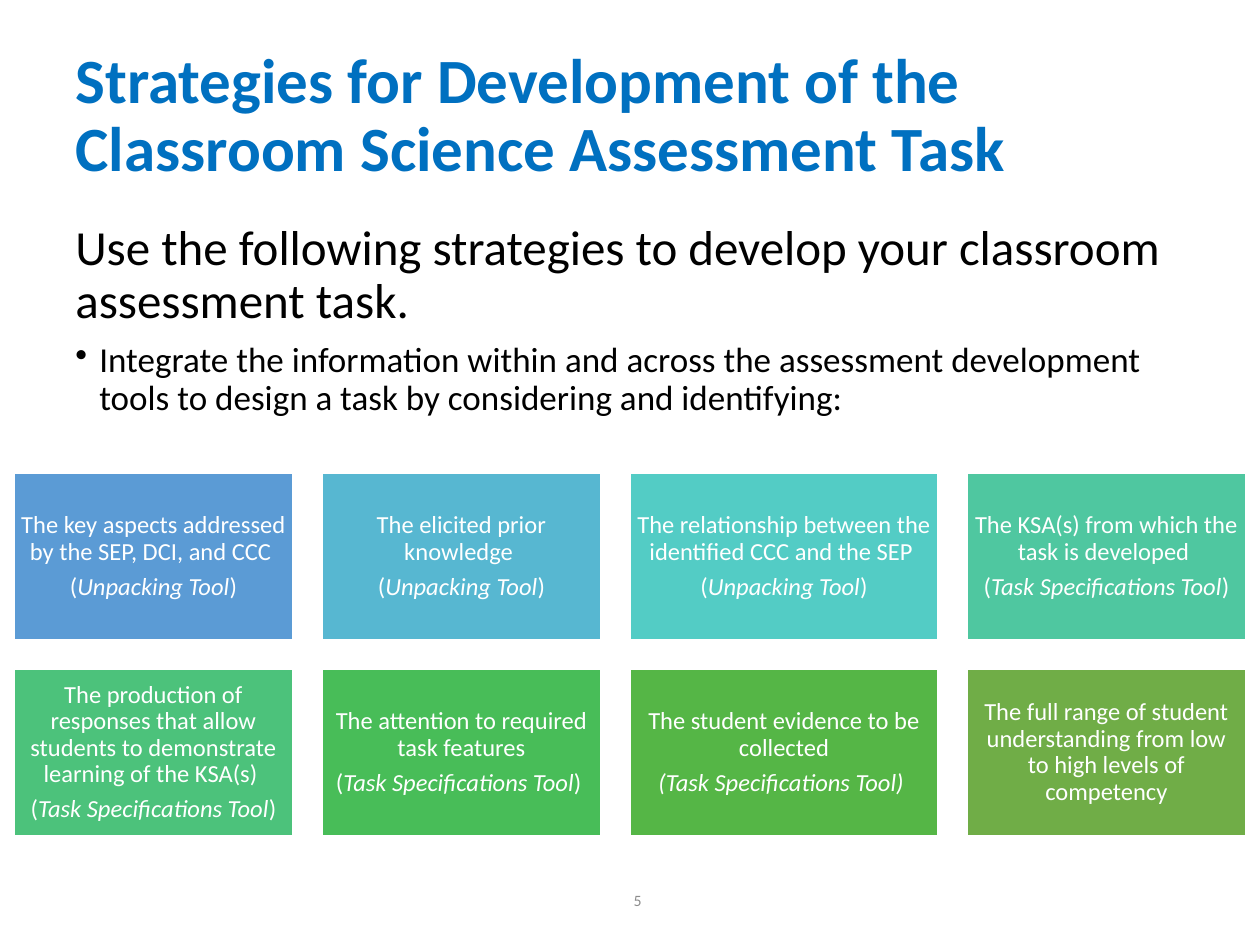
import pptx
import pptx.dml.color
import pptx.enum.shapes
import pptx.enum.text
import pptx.oxml
import pptx.oxml.ns
import pptx.util

PX = 914400 / 126
FONT = "Calibri"
ALIGN = pptx.enum.text.PP_ALIGN
ANCHOR = pptx.enum.text.MSO_ANCHOR
COLORS = {
    "title": "0070C0", "text": "000000", "number": "8C8C8C", "white": "FFFFFF",
    "blue": "5B9BD5", "sky": "57B7D1", "aqua": "53CCC5", "teal": "4FC7A0",
    "mint": "4CC27B", "green": "48BD58", "leaf": "55B646", "olive": "70AD47",
}
UNPACKING = [("(", False), ("Unpacking Tool", True), (")", False)]
SPECIFICATIONS = [("(", False), ("Task Specifications Tool", True), (")", False)]
STRATEGIES = [
    [("blue", "The key aspects addressed by the SEP, DCI, and CCC ", UNPACKING),
     ("sky", "The elicited prior knowledge ", UNPACKING),
     ("aqua", "The relationship between the identified CCC and the SEP ", UNPACKING),
     ("teal", "The KSA(s) from which the task is developed ", SPECIFICATIONS)],
    [("mint", "The production of responses that allow students to demonstrate "
              "learning of the KSA(s) ", SPECIFICATIONS),
     ("green", "The attention to required task features",
      SPECIFICATIONS[:2] + [(") ", False)]),
     ("leaf", "The student evidence to be collected",
      [("(Task Specifications Tool)\u00a0".replace("\u00a0", " "), True)]),
     ("olive", "The full range of student understanding from low to high levels "
               "of competency", None)],
]


def emu(px):
    return pptx.util.Emu(round(px * PX))


def rgb(name):
    return pptx.dml.color.RGBColor.from_string(COLORS[name])


def set_frame(tf, anchor=ANCHOR.TOP, inset=None):
    tf.word_wrap = True
    tf.auto_size = pptx.enum.text.MSO_AUTO_SIZE.NONE
    tf.vertical_anchor = anchor
    if inset is not None:
        tf.margin_left = tf.margin_right = emu(inset)
        tf.margin_top = tf.margin_bottom = emu(inset)


def add_text(tf, text, size=14, color="text", bold=False, align=ALIGN.LEFT,
             before=0, after=0, bullet_indent=None):
    """Fill the empty first paragraph or add one; text is a string or (text, italic) runs."""
    p = tf.paragraphs[0]
    if p.runs:
        p = tf.add_paragraph()
    if bullet_indent:
        pPr = p._p.get_or_add_pPr()
        pPr.set("marL", str(emu(bullet_indent)))
        pPr.set("indent", str(-emu(bullet_indent)))
        bullet = pptx.oxml.parse_xml(
            f'<a:buChar {pptx.oxml.ns.nsdecls("a")} char="•"/>')
        pPr.append(bullet)
    p.alignment = align
    p.line_spacing = 0.9
    p.space_before = pptx.util.Pt(before)
    p.space_after = pptx.util.Pt(after)
    for part, italic in [(text, False)] if isinstance(text, str) else text:
        r = p.add_run()
        r.text = part
        r.font.name = FONT
        r.font.size = pptx.util.Pt(size)
        r.font.bold = bold
        r.font.italic = italic
        r.font.color.rgb = rgb(color)


def add_title(s, x, y, w, h):
    sp = s.shapes.title
    sp.left, sp.top, sp.width, sp.height = map(emu, (x, y, w, h))
    set_frame(sp.text_frame, ANCHOR.MIDDLE)
    add_text(sp.text_frame,
             "Strategies for Development of the Classroom Science Assessment Task",
             size=36, color="title", bold=True)


def add_body(s, x, y, w, h):
    tf = s.shapes.add_textbox(*map(emu, (x, y, w, h))).text_frame
    set_frame(tf)
    add_text(tf, "Use the following strategies to develop your classroom assessment task.",
             size=28)
    add_text(tf, "Integrate the information within and across the assessment development "
                 "tools to design a task by considering and identifying:",
             size=20, before=7.5, bullet_indent=24)


def add_card(s, x, y, w, h, color, text, tool):
    sp = s.shapes.add_shape(pptx.enum.shapes.MSO_SHAPE.RECTANGLE,
                            *map(emu, (x, y, w, h)))
    sp.shadow.inherit = False
    sp.fill.solid()
    sp.fill.fore_color.rgb = rgb(color)
    sp.line.color.rgb = rgb("white")
    sp.line.width = pptx.util.Pt(1)
    set_frame(sp.text_frame, ANCHOR.MIDDLE, inset=7)
    for content in filter(None, (text, tool)):
        add_text(sp.text_frame, content, color="white", align=ALIGN.CENTER, after=5)


def add_strategy_grid(s, x, y, w, h):
    """Two rows of cards; the third column is wider than the others."""
    gap, wide = 29, 308
    narrow = (w - wide - 3 * gap) // 3
    card_h = (h - gap) // 2
    for row, cards in enumerate(STRATEGIES):
        left = x
        for card_w, card in zip((narrow, narrow, wide, narrow), cards):
            add_card(s, left, y + row * (card_h + gap), card_w, card_h, *card)
            left += card_w + gap


def add_slide_number(s, x, y, w, h):
    tf = s.shapes.add_textbox(*map(emu, (x, y, w, h))).text_frame
    set_frame(tf, ANCHOR.MIDDLE)
    add_text(tf, "5", size=9, color="number", align=ALIGN.RIGHT)


def main():
    prs = pptx.Presentation()
    prs.slide_width, prs.slide_height = emu(1260), emu(945)
    s = prs.slides.add_slide(prs.slide_layouts[5])
    add_title(s, 63, 38, 1134, 158)
    add_body(s, 63, 217, 1134, 230)
    add_strategy_grid(s, 14, 473, 1232, 363)
    add_slide_number(s, 370, 876, 284, 50)
    prs.save("out.pptx")


if __name__ == "__main__":
    main()
